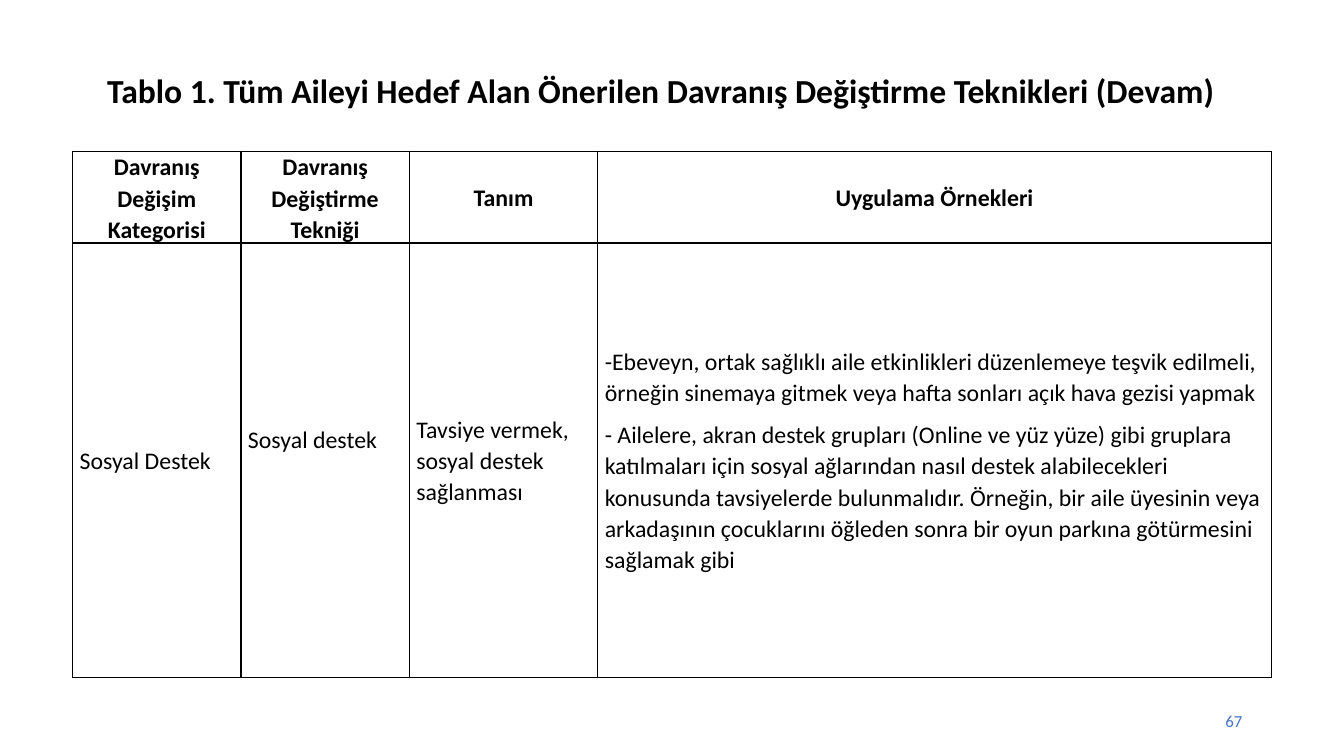
import pptx
import pptx.dml.color
import pptx.enum.text
import pptx.oxml
import pptx.util
from lxml import etree

Inches, Pt = pptx.util.Inches, pptx.util.Pt
RGBColor = pptx.dml.color.RGBColor
ALIGN = pptx.enum.text.PP_ALIGN
MIDDLE = pptx.enum.text.MSO_ANCHOR.MIDDLE

BLACK = RGBColor(0x00, 0x00, 0x00)
BLUE = RGBColor(0x44, 0x72, 0xC4)
FONT = "Calibri"

COLUMN_WIDTHS = [1.67, 1.67, 1.87, 6.68]
ROW_HEIGHTS = [0.91, 4.31]
HEADERS = [
    "Davranış Değişim Kategorisi",
    "Davranış Değiştirme Tekniği",
    "Tanım",
    "Uygulama Örnekleri",
]
SUPPORT_ROW = [
    ["Sosyal Destek"],
    ["Sosyal destek"],
    ["Tavsiye vermek, sosyal destek sağlanması"],
    [
        "-Ebeveyn, ortak sağlıklı aile etkinlikleri düzenlemeye teşvik edilmeli, "
        "örneğin sinemaya gitmek veya hafta sonları açık hava gezisi yapmak",
        "- Ailelere, akran destek grupları (Online ve yüz yüze) gibi gruplara "
        "katılmaları için sosyal ağlarından nasıl destek alabilecekleri konusunda "
        "tavsiyelerde bulunmalıdır. Örneğin, bir aile üyesinin veya arkadaşının "
        "çocuklarını öğleden sonra bir oyun parkına götürmesini sağlamak gibi",
    ],
]


def write_paragraphs(tf, texts, size, color=BLACK, bold=False,
                     align=ALIGN.LEFT, line_spacing=1.0, space_after=0):
    for i, text in enumerate(texts):
        p = tf.paragraphs[0] if i == 0 else tf.add_paragraph()
        p.alignment = align
        p.line_spacing = line_spacing
        p.space_after = Pt(space_after)
        r = p.add_run()
        r.text = text
        r.font.name = FONT
        r.font.size = Pt(size)
        r.font.bold = bold
        r.font.color.rgb = color


def add_text(s, box, text, size, **style):
    sp = s.shapes.add_textbox(*map(Inches, box))
    tf = sp.text_frame
    tf.word_wrap = True
    tf.vertical_anchor = MIDDLE
    write_paragraphs(tf, [text], size, **style)


def set_borders(cell, color=BLACK, width=1):
    """Draw all four edges; they must come before the fill in the cell XML."""
    tc_pr = cell._tc.get_or_add_tcPr()
    for i, edge in enumerate(("lnL", "lnR", "lnT", "lnB")):
        ln = etree.Element(pptx.oxml.ns.qn(f"a:{edge}"), w=str(Pt(width)))
        fill = etree.SubElement(ln, pptx.oxml.ns.qn("a:solidFill"))
        etree.SubElement(fill, pptx.oxml.ns.qn("a:srgbClr"), val=str(color))
        tc_pr.insert(i, ln)


def add_techniques_table(s, box):
    rows = [[[header] for header in HEADERS], SUPPORT_ROW]
    table = s.shapes.add_table(len(rows), len(HEADERS), *map(Inches, box)).table
    table.horz_banding = False
    for column, width in zip(table.columns, COLUMN_WIDTHS):
        column.width = Inches(width)
    for row, height in zip(table.rows, ROW_HEIGHTS):
        row.height = Inches(height)

    header_style = dict(bold=True, align=ALIGN.CENTER)
    body_style = dict(space_after=8)
    for i, row in enumerate(rows):
        for j, texts in enumerate(row):
            cell = table.cell(i, j)
            cell.fill.background()
            set_borders(cell)
            cell.vertical_anchor = MIDDLE
            cell.margin_left = cell.margin_right = Inches(0.07)
            cell.margin_top = cell.margin_bottom = 0
            write_paragraphs(cell.text_frame, texts, 17, line_spacing=1.07,
                             **(header_style if i == 0 else body_style))
    # The technique name sits a little above the middle of its cell
    table.cell(1, 1).margin_bottom = Inches(0.42)


def main():
    prs = pptx.Presentation()
    prs.slide_width, prs.slide_height = Inches(13.33), Inches(7.5)
    s = prs.slides.add_slide(prs.slide_layouts[6])
    add_text(s, (0.61, 0.48, 11.89, 0.87),
             "Tablo 1. Tüm Aileyi Hedef Alan Önerilen Davranış Değiştirme "
             "Teknikleri (Devam)",
             24, bold=True, align=ALIGN.CENTER, line_spacing=0.9)
    add_techniques_table(s, (0.72, 1.5, 11.89, 5.22))
    add_text(s, (9.42, 6.95, 3, 0.4), "67", 12, color=BLUE, align=ALIGN.RIGHT)
    prs.save("out.pptx")


if __name__ == "__main__":
    main()
